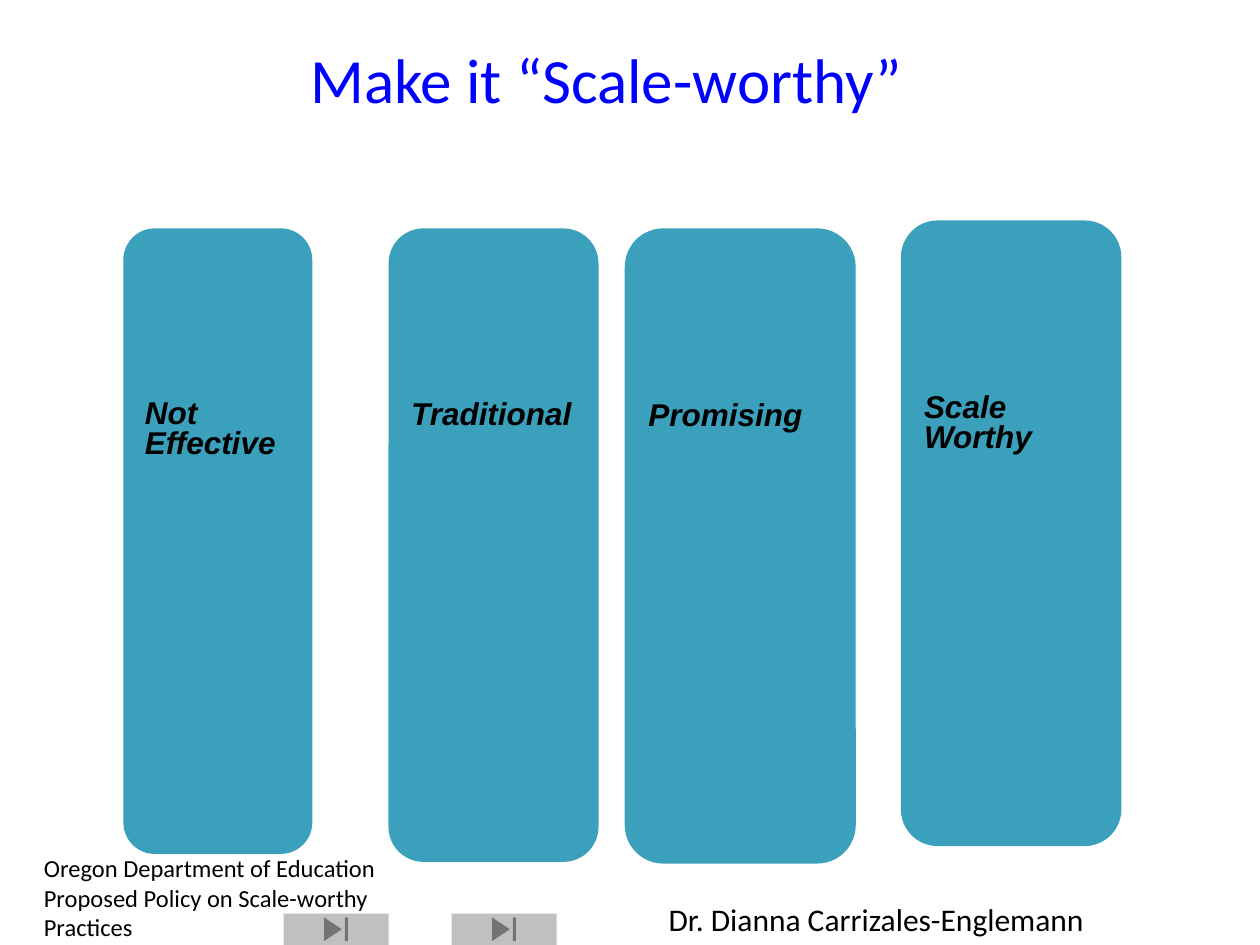
from pptx import Presentation
from pptx.dml.color import RGBColor
from pptx.enum.shapes import MSO_SHAPE
from pptx.enum.text import MSO_ANCHOR, PP_ALIGN
from pptx.util import Pt

ROUNDED = MSO_SHAPE.ROUNDED_RECTANGLE
END_BUTTON = MSO_SHAPE.ACTION_BUTTON_END
TOP, MIDDLE = MSO_ANCHOR.TOP, MSO_ANCHOR.MIDDLE
LEFT, CENTER = PP_ALIGN.LEFT, PP_ALIGN.CENTER

BLUE = RGBColor(0x00, 0x00, 0xFF)
TEAL = RGBColor(0x3B, 0xA0, 0xBB)
GRAY = RGBColor(0xC0, 0xC0, 0xC0)
BLACK = RGBColor(0x00, 0x00, 0x00)

COLUMNS = [
    ("Not Effective", 70.5, 130.5, 108, 357.5),
    ("Traditional", 222, 130.5, 120, 362),
    ("Promising", 357, 130.5, 132, 363),
    ("Scale Worthy", 514.8, 126, 126, 357.5),
]
BUTTON_LEFTS = [162, 258]
LABEL_OFFSET = 93


def write(frame, text, size, color, font_name="Calibri", align=LEFT, anchor=TOP):
    frame.word_wrap = True
    frame.vertical_anchor = anchor
    frame.text = text
    para = frame.paragraphs[0]
    para.alignment = align
    para.font.name = font_name
    para.font.size = Pt(size)
    para.font.color.rgb = color
    return para


def set_title(slide, text):
    title = slide.shapes.title
    title.left, title.top = Pt(70.5), Pt(12)
    title.width, title.height = Pt(552), Pt(66)
    write(title.text_frame, text, 36, BLUE, align=CENTER, anchor=MIDDLE)


def add_text(slide, text, size, left, top, width, height):
    box = slide.shapes.add_textbox(Pt(left), Pt(top), Pt(width), Pt(height))
    write(box.text_frame, text, size, BLACK)


def add_filled_shape(slide, kind, color, left, top, width, height):
    shape = slide.shapes.add_shape(kind, Pt(left), Pt(top), Pt(width), Pt(height))
    shape.shadow.inherit = False
    shape.fill.solid()
    shape.fill.fore_color.rgb = color
    shape.line.fill.background()
    return shape


def add_column(slide, label, left, top, width, height):
    column = add_filled_shape(slide, ROUNDED, TEAL, left, top, width, height)
    column.text_frame.margin_top = Pt(LABEL_OFFSET)
    para = write(column.text_frame, label, 18, BLACK, font_name="Arial")
    para.line_spacing = 0.8
    para.font.bold = True
    para.font.italic = True


def main():
    deck = Presentation()
    deck.slide_width, deck.slide_height = Pt(720), Pt(540)
    slide = deck.slides.add_slide(deck.slide_layouts[5])

    set_title(slide, "Make it “Scale-worthy”")
    add_text(slide, "Dr. Dianna Carrizales-Englemann", 18, 375, 511, 345, 29)
    for left in BUTTON_LEFTS:
        add_filled_shape(slide, END_BUTTON, GRAY, left, 522, 60, 18)
    for column in COLUMNS:
        add_column(slide, *column)
    add_text(
        slide,
        "Oregon Department of Education\vProposed Policy on Scale-worthy Practices",
        14, 18, 484, 204.5, 58,
    )

    deck.save("out.pptx")


if __name__ == "__main__":
    main()
